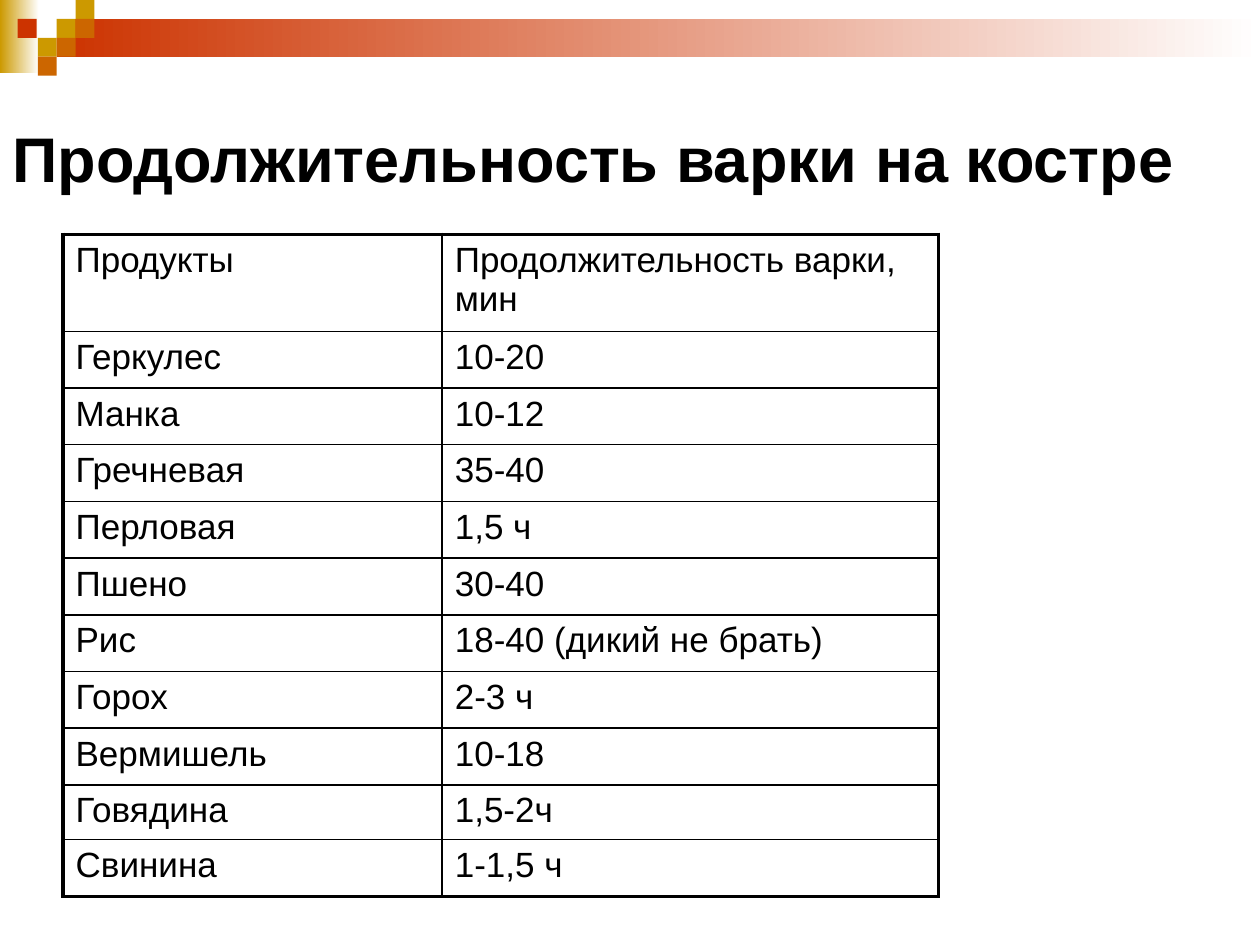
from pptx import Presentation
from pptx.dml.color import RGBColor
from pptx.enum.shapes import MSO_SHAPE as Preset
from pptx.enum.text import MSO_ANCHOR as Anchor, PP_ALIGN as Align
from pptx.oxml.ns import qn
from pptx.util import Inches, Pt
from lxml.etree import SubElement

COLORS = {
    "gold": "CC9900",
    "red": "CC3300",
    "orange": "CC6600",
    "white": "FFFFFF",
    "black": "000000",
}
FORMATS = {
    "title": {"name": "Arial", "size": Pt(36), "bold": True},
    "cell": {"name": "Arial", "size": Pt(20), "bold": False},
}
SQUARE = 0.15
SQUARES = [
    (0.45, 0.15, "gold"),
    (0.6, 0, "gold"),
    (0.6, 0.15, "orange"),
    (0.3, 0.3, "gold"),
    (0.14, 0.15, "red"),
    (0.45, 0.3, "orange"),
    (0.3, 0.45, "orange"),
]
COLUMN_WIDTHS = [3.01, 3.94]
ROW_HEIGHTS = [0.77] + [0.45] * 8 + [0.43, 0.45]
COOKING_TIMES = [
    ("Продукты", "Продолжительность варки, мин"),
    ("Геркулес", "10-20"),
    ("Манка", "10-12"),
    ("Гречневая", "35-40"),
    ("Перловая", "1,5 ч"),
    ("Пшено", "30-40"),
    ("Рис", "18-40 (дикий не брать)"),
    ("Горох", "2-3 ч"),
    ("Вермишель", "10-18"),
    ("Говядина", "1,5-2ч"),
    ("Свинина", "1-1,5 ч"),
]
OUTER_LINE, INNER_LINE = 2.25, 1


def color(name):
    """Return the named colour."""
    return RGBColor.from_string(COLORS[name])


def write_text(frame, text, format_name):
    """Write one left-aligned black paragraph in the named format."""
    paragraph = frame.paragraphs[0]
    paragraph.alignment = Align.LEFT
    run = paragraph.add_run()
    run.text = text
    for attribute, value in FORMATS[format_name].items():
        setattr(run.font, attribute, value)
    run.font.color.rgb = color("black")


def add_block(slide, left, top, width, height, color_name, fade=False):
    """Add a borderless rectangle, solid or fading to white."""
    box = [Inches(length) for length in (left, top, width, height)]
    shape = slide.shapes.add_shape(Preset.RECTANGLE, *box)
    shape.shadow.inherit = False
    shape.line.fill.background()
    if fade:
        shape.fill.gradient()
        shape.fill.gradient_angle = 0
        for stop, name in zip(shape.fill.gradient_stops, (color_name, "white")):
            stop.color.rgb = color(name)
    else:
        shape.fill.solid()
        shape.fill.fore_color.rgb = color(color_name)


def add_header_band(slide, left, top, width):
    """Add the fading bars and the mosaic of squares."""
    add_block(slide, left, top, 0.31, 0.58, "gold", fade=True)
    add_block(slide, left + 0.45, top + 0.15, width - 0.45, 0.3, "red", fade=True)
    for across, down, name in SQUARES:
        add_block(slide, left + across, top + down, SQUARE, SQUARE, name)


def add_title(slide, left, top, width, height):
    """Add the slide title."""
    box = [Inches(length) for length in (left, top, width, height)]
    frame = slide.shapes.add_textbox(*box).text_frame
    frame.word_wrap = True
    frame.vertical_anchor = Anchor.MIDDLE
    write_text(frame, "Продолжительность варки на костре", "title")


def set_borders(cell, widths):
    """Draw the cell's sides in black with the given widths in points."""
    properties = cell._tc.get_or_add_tcPr()
    for index, (side, width) in enumerate(widths.items()):
        line = SubElement(properties, qn(f"a:ln{side}"), w=str(Pt(width)))
        fill = SubElement(line, qn("a:solidFill"))
        SubElement(fill, qn("a:srgbClr"), val=COLORS["black"])
        properties.insert(index, line)


def add_cooking_table(slide, left, top):
    """Add the table of cooking times with a heavy outer frame."""
    row_count, column_count = len(ROW_HEIGHTS), len(COLUMN_WIDTHS)
    table = slide.shapes.add_table(
        row_count, column_count, Inches(left), Inches(top),
        Inches(sum(COLUMN_WIDTHS)), Inches(sum(ROW_HEIGHTS)),
    ).table
    table.first_row = table.horz_banding = False
    for column, width in zip(table.columns, COLUMN_WIDTHS):
        column.width = Inches(width)
    for row, height in zip(table.rows, ROW_HEIGHTS):
        row.height = Inches(height)
    for row_index, texts in enumerate(COOKING_TIMES):
        for column_index, text in enumerate(texts):
            cell = table.cell(row_index, column_index)
            cell.fill.background()
            write_text(cell.text_frame, text, "cell")
            on_edge = {
                "L": column_index == 0,
                "R": column_index == column_count - 1,
                "T": row_index == 0,
                "B": row_index == row_count - 1,
            }
            set_borders(cell, {
                side: OUTER_LINE if outer else INNER_LINE
                for side, outer in on_edge.items()
            })


def main():
    """Build and save the presentation."""
    presentation = Presentation()
    presentation.slide_width = Inches(10)
    presentation.slide_height = Inches(7.5)
    slide = presentation.slides.add_slide(presentation.slide_layouts[6])
    add_header_band(slide, 0, 0, 10)
    add_title(slide, 0, 0.5, 9.57, 1.5)
    add_cooking_table(slide, 0.5, 1.86)
    presentation.save("out.pptx")


if __name__ == "__main__":
    main()
